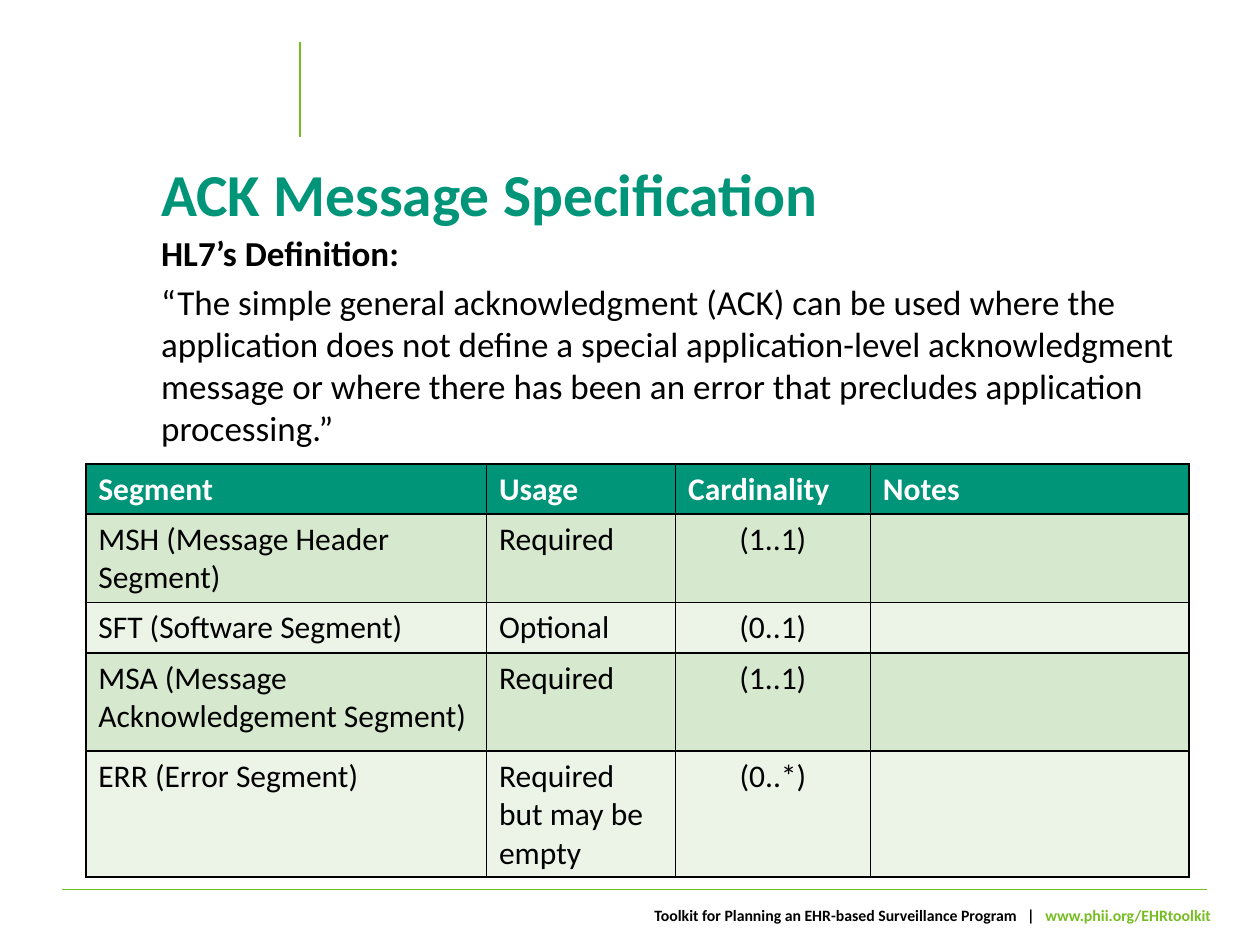
from lxml import etree
from pptx import Presentation
from pptx.dml.color import RGBColor
from pptx.enum import shapes, text
from pptx.oxml import ns
from pptx.util import Pt

COLORS = {
    "text": "000000",
    "white": "FFFFFF",
    "teal": "009579",
    "green": "76BD22",
    "band_dark": "D6E8CD",
    "band_light": "ECF4E8",
}
FONT = "Calibri"

HEADERS = ["Segment", "Usage", "Cardinality", "Notes"]
SEGMENTS = [
    ["MSH (Message Header Segment)", "Required", "(1..1)", ""],
    ["SFT (Software Segment)", "Optional", "(0..1)", ""],
    ["MSA (Message Acknowledgement Segment)", "Required", "(1..1)", ""],
    ["ERR (Error Segment)", "Required but may be empty", "(0..*)", ""],
]
DEFINITION = (
    "“The simple general acknowledgment (ACK) can be used where the application "
    "does not define a special application-level acknowledgment message or where "
    "there has been an error that precludes application processing.”"
)


class SlideBuilder:
    def __init__(self, slide):
        self.slide = slide

    def style(self, font, size, color="text", bold=False):
        font.name = FONT
        font.size = Pt(size)
        font.bold = bold
        font.color.rgb = RGBColor.from_string(COLORS[color])

    def rule(self, x1, y1, x2, y2):
        line = self.slide.shapes.add_connector(
            shapes.MSO_CONNECTOR.STRAIGHT, Pt(x1), Pt(y1), Pt(x2), Pt(y2))
        line.line.color.rgb = RGBColor.from_string(COLORS["green"])
        line.line.width = Pt(0.75)
        etree.SubElement(line._element.spPr, ns.qn("a:effectLst"))

    def text_box(self, left, top, width, height, anchor=text.MSO_ANCHOR.TOP):
        frame = self.slide.shapes.add_textbox(
            Pt(left), Pt(top), Pt(width), Pt(height)).text_frame
        frame.word_wrap = True
        frame.vertical_anchor = anchor
        return frame

    def title(self, wording):
        frame = self.text_box(85, 80.6, 602.6, 53.3, text.MSO_ANCHOR.BOTTOM)
        heading = frame.paragraphs[0]
        heading.text = wording
        heading.line_spacing = Pt(38)
        self.style(heading.font, 34, "teal", True)

    def body(self, lead, quote):
        frame = self.text_box(85, 128.9, 599, 339.8)
        lead_in = frame.paragraphs[0]
        lead_in.text = lead
        self.style(lead_in.font, 20, bold=True)
        quotation = frame.add_paragraph()
        quotation.text = quote
        quotation.space_before = Pt(4)
        self.style(quotation.font, 20)

    def footer(self, toolkit, address):
        credit = self.text_box(211, 514, 488, 40).paragraphs[0]
        credit.alignment = text.PP_ALIGN.RIGHT
        parts = [(toolkit, "text"), (" |", "text"), (" " + address, "green")]
        for wording, color in parts:
            run = credit.add_run()
            run.text = wording
            self.style(run.font, 9, color, True)
        # Letter spacing widens the gaps around the divider.
        credit.runs[1]._r.get_or_add_rPr().set("spc", "400")

    def border(self, cell):
        properties = cell._tc.get_or_add_tcPr()
        for position, side in enumerate(("lnL", "lnR", "lnT", "lnB")):
            edge = etree.Element(ns.qn("a:" + side), w=str(Pt(1)))
            fill = etree.SubElement(edge, ns.qn("a:solidFill"))
            etree.SubElement(fill, ns.qn("a:srgbClr"), val=COLORS["text"])
            properties.insert(position, edge)

    def table(self, left, top, widths, heights, rows):
        """Draw a header row and banded rows; the third column is centred."""
        grid = self.slide.shapes.add_table(
            len(rows), len(widths), Pt(left), Pt(top),
            Pt(sum(widths)), Pt(sum(heights))).table
        for column, width in zip(grid.columns, widths):
            column.width = Pt(width)
        for index, (row, height) in enumerate(zip(grid.rows, heights)):
            row.height = Pt(height)
            is_header = index == 0
            band = "band_dark" if index % 2 else "band_light"
            for position, wording in enumerate(rows[index]):
                cell = row.cells[position]
                cell.fill.solid()
                cell.fill.fore_color.rgb = RGBColor.from_string(
                    COLORS["teal" if is_header else band])
                self.border(cell)
                entry = cell.text_frame.paragraphs[0]
                entry.text = wording
                if position == 2 and not is_header:
                    entry.alignment = text.PP_ALIGN.CENTER
                self.style(entry.font, 18, "white" if is_header else "text", is_header)


def main():
    deck = Presentation()
    deck.slide_width, deck.slide_height = Pt(720), Pt(540)
    page = SlideBuilder(deck.slides.add_slide(deck.slide_layouts[6]))
    page.rule(171.4, 24, 171.4, 78.5)
    page.rule(690, 508.3, 35.3, 508.3)
    page.footer("Toolkit for Planning an EHR-based Surveillance Program",
                "www.phii.org/EHRtoolkit")
    page.title("ACK Message Specification")
    page.body("HL7’s Definition:", DEFINITION)
    page.table(49, 265, [229, 108, 111.4, 182], [28.4, 47.5, 28.4, 56, 53.3],
               [HEADERS] + SEGMENTS)
    deck.save("out.pptx")


if __name__ == "__main__":
    main()
